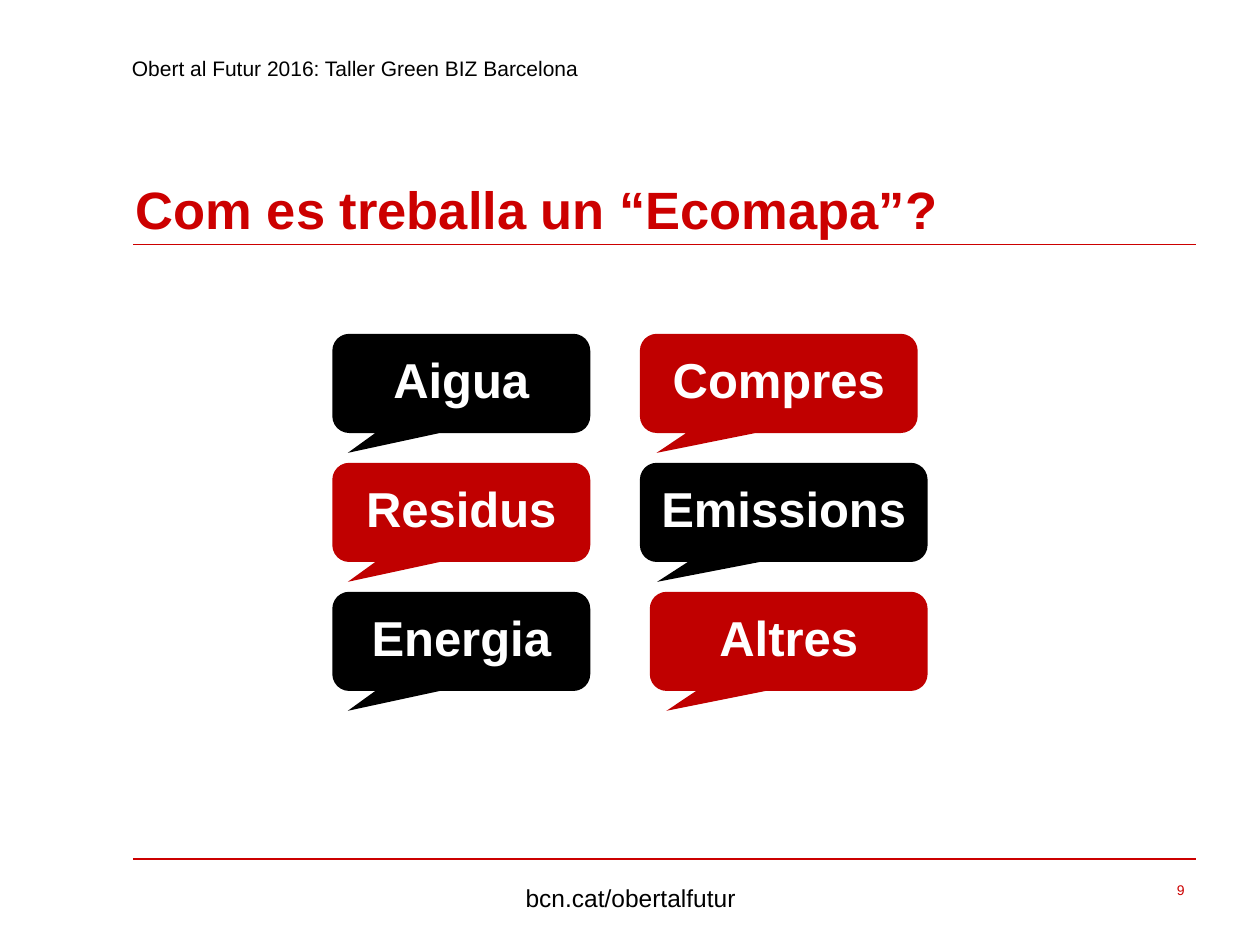
from dataclasses import dataclass

from lxml import etree
from pptx import Presentation
from pptx.dml.color import RGBColor
from pptx.enum.shapes import MSO_CONNECTOR, MSO_SHAPE
from pptx.enum.text import MSO_ANCHOR, PP_ALIGN
from pptx.oxml.ns import qn
from pptx.util import Cm, Pt

LEFT, CENTER, RIGHT = PP_ALIGN.LEFT, PP_ALIGN.CENTER, PP_ALIGN.RIGHT
TOP = MSO_ANCHOR.TOP
CALLOUT = MSO_SHAPE.ROUNDED_RECTANGULAR_CALLOUT
STRAIGHT = MSO_CONNECTOR.STRAIGHT


@dataclass(frozen=True)
class Theme:
    font: str = "Arial"
    accent: str = "CC0000"
    red: str = "C00000"
    black: str = "000000"
    white: str = "FFFFFF"
    title: int = 30
    callout: int = 28
    footer: int = 14
    header: int = 12
    number: int = 8
    rule: int = 1


THEME = Theme()

# text, (left, top, width, height) in cm, size, colour, bold, alignment, wrap, top inset
LABELS = [
    ("bcn.cat/obertalfutur", (8.69, 17.65, 8.05, 1.02),
     THEME.footer, THEME.black, False, CENTER, True, 0.16),
    ("9", (18.21, 17.65, 5.92, 1.02),
     THEME.number, THEME.accent, False, RIGHT, True, 0.13),
    ("Obert al Futur 2016: Taller Green BIZ Barcelona", (2.41, 0.99, 9.6, 0.76),
     THEME.header, THEME.black, False, LEFT, False, 0.13),
    ("Com es treballa un “Ecomapa”?", (2.49, 3.33, 21.62, 1.47),
     THEME.title, THEME.accent, True, LEFT, True, 0.23),
]

RULE_LEFT, RULE_RIGHT = 2.69, 24.1
RULE_TOPS = [17.32, 4.93]

# Each row holds (text, left, width) in cm; fills alternate like a chessboard
CALLOUT_ROWS = [
    [("Aigua", 6.7, 5.2), ("Compres", 12.9, 5.6)],
    [("Residus", 6.7, 5.2), ("Emissions", 12.9, 5.8)],
    [("Energia", 6.7, 5.2), ("Altres", 13.1, 5.6)],
]
FIRST_ROW, ROW_STEP, CALLOUT_HEIGHT = 6.73, 2.6, 2.0
CALLOUT_INSET = 0.22
POINTER = (-0.44, 0.7, 0.17)


def write(shape, text, size, colour, bold, align, wrap, inset):
    frame = shape.text_frame
    frame.word_wrap = wrap
    frame.vertical_anchor = TOP
    frame.margin_top = Cm(inset)
    para = frame.paragraphs[0]
    para.alignment = align
    span = para.add_run()
    span.text = text
    span.font.name = THEME.font
    span.font.size = Pt(size)
    span.font.bold = bold
    span.font.color.rgb = RGBColor.from_string(colour)


def add_rule(page, top):
    rule = page.shapes.add_connector(
        STRAIGHT, Cm(RULE_LEFT), Cm(top), Cm(RULE_RIGHT), Cm(top))
    rule.line.color.rgb = RGBColor.from_string(THEME.accent)
    rule.line.width = Pt(THEME.rule)
    etree.SubElement(rule._element.spPr, qn("a:effectLst"))


def add_callout(page, text, left, top, width, fill):
    callout = page.shapes.add_shape(
        CALLOUT, Cm(left), Cm(top), Cm(width), Cm(CALLOUT_HEIGHT))
    callout.shadow.inherit = False
    callout.fill.solid()
    callout.fill.fore_color.rgb = RGBColor.from_string(fill)
    callout.line.fill.background()
    for index, value in enumerate(POINTER):
        callout.adjustments[index] = value
    write(callout, text, THEME.callout, THEME.white, True, CENTER, True, CALLOUT_INSET)


def main():
    deck = Presentation()
    deck.slide_width, deck.slide_height = Cm(25.4), Cm(19.05)
    page = deck.slides.add_slide(deck.slide_layouts[6])

    for top in RULE_TOPS:
        add_rule(page, top)
    for text, place, *style in LABELS:
        box = page.shapes.add_textbox(*map(Cm, place))
        write(box, text, *style)
    fills = (THEME.black, THEME.red)
    for row, callouts in enumerate(CALLOUT_ROWS):
        for column, (text, left, width) in enumerate(callouts):
            top = FIRST_ROW + row * ROW_STEP
            add_callout(page, text, left, top, width, fills[(row + column) % 2])

    deck.save("out.pptx")


if __name__ == "__main__":
    main()
